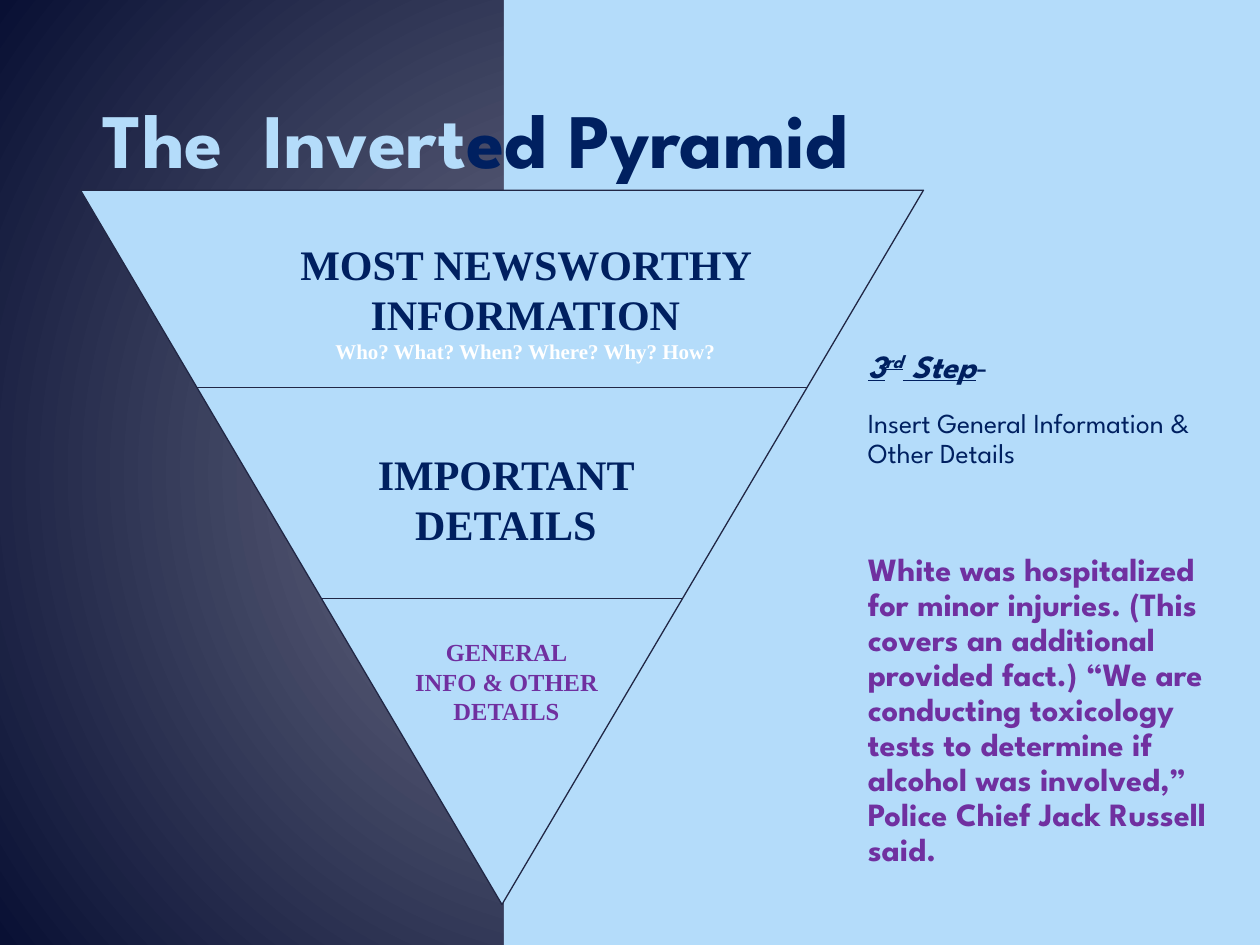
from lxml import etree
from pptx import Presentation
from pptx import util as u
from pptx.dml.color import RGBColor
from pptx.enum import shapes, text
from pptx.oxml.ns import qn

SKY, NAVY, INK, PURPLE, WHITE = "B4DCFA", "002060", "212745", "7030A0", "FFFFFF"
SANS, SERIF = "League Spartan", "Times New Roman"


def rgb(value):
    return RGBColor.from_string(value)


def run(content, **fmt):
    return content, fmt


class Deck:
    """Holds the presentation, its style and the current slide."""

    def __init__(self, width, height):
        self.prs = Presentation()
        self.prs.slide_width, self.prs.slide_height = u.Pt(width), u.Pt(height)
        self.s = self.prs.slides.add_slide(self.prs.slide_layouts[6])

    def glow(self, inner, outer):
        fill = self.s.background.fill
        fill.gradient()
        for stop, color, position in zip(fill.gradient_stops, (inner, outer), (0, 1)):
            stop.color.rgb = rgb(color)
            stop.position = position
        grad = next(self.s.element.iter(qn("a:gradFill")))
        grad.remove(grad.find(qn("a:lin")))
        path = etree.SubElement(grad, qn("a:path"), path="circle")
        etree.SubElement(path, qn("a:fillToRect"), l="50000", t="50000", r="50000", b="50000")

    def shape(self, kind, box, fill, line=None):
        sp = self.s.shapes.add_shape(kind, *map(u.Pt, box))
        sp.shadow.inherit = False
        sp.fill.solid()
        sp.fill.fore_color.rgb = rgb(fill)
        if line:
            sp.line.color.rgb = rgb(line)
            sp.line.width = u.Pt(0.75)
        else:
            sp.line.fill.background()

    def line(self, x1, y1, x2, y2, color):
        cx = self.s.shapes.add_connector(shapes.MSO_CONNECTOR.STRAIGHT, *map(u.Pt, (x1, y1, x2, y2)))
        cx.line.color.rgb = rgb(color)
        cx.line.width = u.Pt(0.75)
        etree.SubElement(cx.element.spPr, qn("a:effectLst"))

    def text(self, box, paragraphs, insets=(7.2, 3.6, 7.2, 3.6), align="LEFT",
             anchor="TOP", spacing=None, before=None, **base):
        tf = self.s.shapes.add_textbox(*map(u.Pt, box)).text_frame
        tf.word_wrap = True
        tf.vertical_anchor = text.MSO_ANCHOR[anchor]
        tf.margin_left, tf.margin_top, tf.margin_right, tf.margin_bottom = map(u.Pt, insets)
        for i, runs in enumerate(paragraphs):
            p = tf.add_paragraph() if i else tf.paragraphs[0]
            p.alignment = text.PP_ALIGN[align]
            p.line_spacing = spacing
            if before:
                p.space_before = u.Pt(before[i])
            for content, fmt in runs:
                self.run(p, content, **{**base, **fmt})

    def run(self, p, content, font, size, color, bold=False, italic=False,
            underline=False, raised=0, outline=None):
        r = p.add_run()
        r.text = content
        f = r.font
        f.name, f.size, f.color.rgb = font, u.Pt(size), rgb(color)
        f.bold, f.italic, f.underline = bold, italic, underline
        rpr = r._r.get_or_add_rPr()
        if raised:
            rpr.set("baseline", str(raised * 1000))
        if outline:
            ln = etree.Element(qn("a:ln"), w=str(u.Pt(1.75)))
            fill = etree.SubElement(ln, qn("a:solidFill"))
            etree.SubElement(fill, qn("a:srgbClr"), val=outline)
            rpr.insert(0, ln)


def main():
    deck = Deck(720, 540)
    deck.glow("787B91", "091034")
    deck.shape(shapes.MSO_SHAPE.RECTANGLE, (288, 0, 432, 540), SKY)

    left, top, width, height = pyramid = (46, 108.7, 481.7, 408.2)
    deck.shape(shapes.MSO_SHAPE.FLOWCHART_MERGE, pyramid, SKY, INK)
    for y in (221.6, 342):
        inset = (y - top) / height * width / 2
        deck.line(left + inset, y, left + width - inset, y, INK)

    levels = [
        ((111.6, 128.9, 377.3, 46), 24, NAVY,
         [[run("MOST NEWSWORTHY INFORMATION")],
          [run("Who? What? When? Where? Why? How?", size=12, color=WHITE)]]),
        ((177.1, 249.1, 223.9, 46), 24, NAVY, [[run("IMPORTANT DETAILS")]]),
        ((226.1, 357.1, 126.7, 80), 14, PURPLE,
         [[run("GENERAL")], [run("INFO & OTHER DETAILS")]]),
    ]
    for box, size, color, paragraphs in levels:
        deck.text(box, paragraphs, insets=[7.2] * 4, align="CENTER",
                  font=SERIF, size=size, color=color, bold=True)

    deck.text((39.6, 1.4, 488.2, 108), [[run("The  Invert", color=SKY), run("ed Pyramid")]],
              insets=(19.2, 3.6, 7.2, 3.6), anchor="BOTTOM", spacing=0.9,
              font=SANS, size=44, color=NAVY, bold=True, outline=SKY)

    step = dict(bold=True, italic=True, underline=True)
    deck.text((488.9, 196.6, 226.1, 342), [
        [run("3", **step), run("rd", raised=30, **step), run(" Step", **step), run("-")],
        [run("Insert General Information & Other Details", size=15.7)],
        [run("White was hospitalized for minor injuries. (This covers an additional "
             "provided fact.) “We are conducting toxicology tests to determine if "
             "alcohol was involved,” Police Chief Jack Russell said.",
             color=PURPLE, bold=True)],
    ], spacing=0.9, before=(0, 14, 48), font=SANS, size=18.5, color=NAVY)

    deck.prs.save("out.pptx")


if __name__ == "__main__":
    main()
